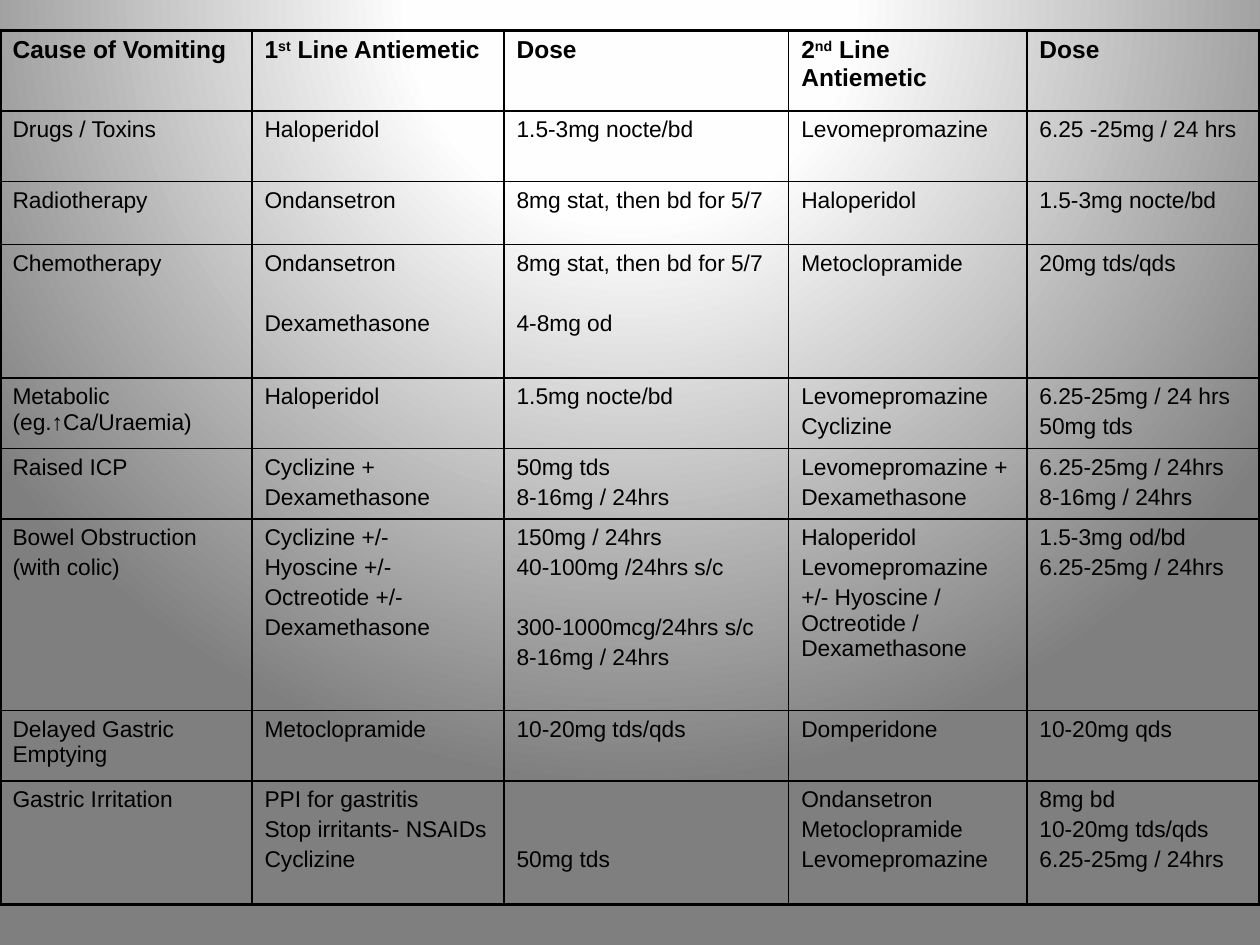
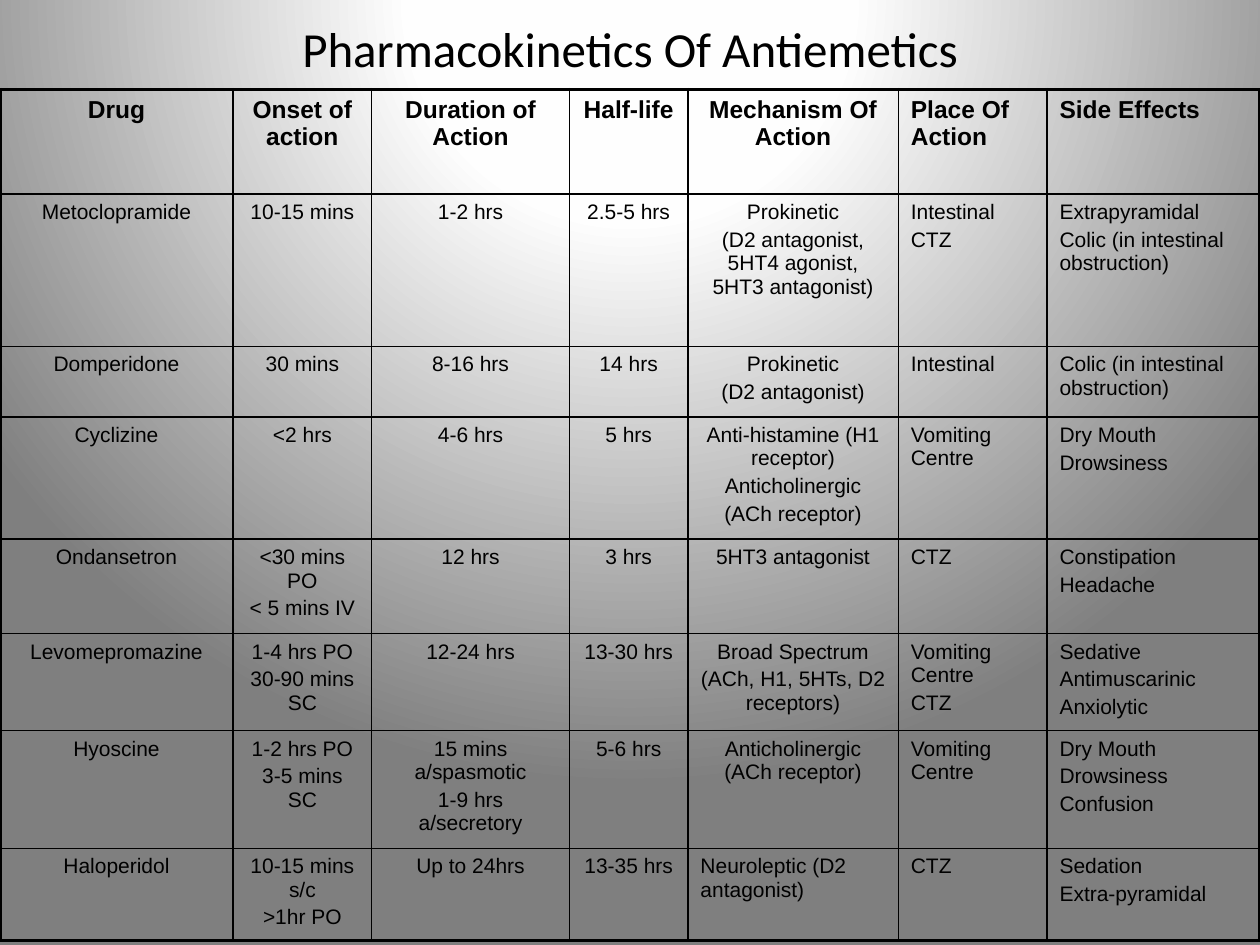
from lxml import etree
from pptx import Presentation
from pptx.dml.color import RGBColor
from pptx.enum.text import MSO_ANCHOR, PP_ALIGN
from pptx.oxml import parse_xml
from pptx.oxml.ns import nsdecls, qn
from pptx.util import Inches, Pt

BLACK = "000000"
GRADIENT = ((0, "FFFFFF"), (28, "FEFEFE"), (100, "7F7F7F"))
HEADER_SIZE = 14
OUTER_LINE, INNER_LINE = 2.25, 1
LINE_STEP = 1.32  # line height plus paragraph gap, in font sizes
PARA_GAP = 0.2


def color(value):
    return RGBColor.from_string(value)


def add_grid(page, top, widths, heights, rows, body_size, centred=0):
    """Ruled table; a line break starts a paragraph, ^marks^ raise text."""
    table = page.shapes.add_table(
        len(rows), len(widths), Inches(0), Inches(top),
        Inches(sum(widths)), Inches(sum(heights))).table
    table.first_row = table.horz_banding = False
    for column, width in zip(table.columns, widths):
        column.width = Inches(width)
    for line, height in zip(table.rows, heights):
        line.height = Inches(height)

    for r, row in enumerate(rows):
        size = body_size if r else HEADER_SIZE
        for c, text in enumerate(row):
            cell = table.cell(r, c)

            # Heavy outside edges, thin inside ones
            outer_edges = (("lnL", c == 0), ("lnR", c == len(widths) - 1),
                           ("lnT", r == 0), ("lnB", r == len(rows) - 1))
            properties = cell._tc.get_or_add_tcPr()
            for tag, is_outer in outer_edges:
                weight = Pt(OUTER_LINE if is_outer else INNER_LINE)
                edge = etree.SubElement(properties, qn(f"a:{tag}"), w=str(weight))
                ink = etree.SubElement(edge, qn("a:solidFill"))
                etree.SubElement(ink, qn("a:srgbClr"), val=BLACK)
            cell.fill.background()

            # Empty lines become spacing above the next paragraph
            frame = cell.text_frame
            skipped, para = 0, None
            for content in text.split("\n"):
                if not content:
                    skipped += 1
                    continue
                if para is None:
                    para = frame.paragraphs[0]
                    cell.margin_top = Inches(0.05) + Pt(skipped * LINE_STEP * size)
                else:
                    para = frame.add_paragraph()
                    para.space_before = Pt((PARA_GAP + skipped * LINE_STEP) * size)
                skipped = 0
                para.alignment = PP_ALIGN.CENTER if c < centred else PP_ALIGN.LEFT
                for part, words in enumerate(content.split("^")):
                    span = para.add_run()
                    span.text = words
                    span.font.name = "Arial"
                    span.font.size = Pt(size)
                    span.font.bold = r == 0
                    span.font.color.rgb = color(BLACK)
                    if part % 2:
                        span._r.get_or_add_rPr().set("baseline", "30000")
    return table


deck = Presentation()
deck.slide_width, deck.slide_height = Inches(10), Inches(7.5)
blank = deck.slide_layouts[6]

# Shared background: light glow from above the page
master = deck.slide_master
master.background.fill.solid()
stops = "".join(f'<a:gs pos="{place * 1000}"><a:srgbClr val="{shade}"/></a:gs>'
                for place, shade in GRADIENT)
glow = parse_xml(
    f'<a:gradFill {nsdecls("a")} rotWithShape="1"><a:gsLst>{stops}</a:gsLst>'
    '<a:path path="circle"><a:fillToRect l="50000" t="-80000" r="50000" b="180000"/>'
    '</a:path></a:gradFill>')
plain = master._element.find(".//" + qn("p:bgPr")).find(qn("a:solidFill"))
plain.getparent().replace(plain, glow)

# Slide 1: antiemetic choice by cause
page = deck.slides.add_slide(blank)
causes = [
    ("Cause of Vomiting", "1^st^ Line Antiemetic", "Dose",
     "2^nd^ Line Antiemetic", "Dose"),
    ("Drugs / Toxins", "Haloperidol", "1.5-3mg nocte/bd",
     "Levomepromazine", "6.25 -25mg / 24 hrs"),
    ("Radiotherapy", "Ondansetron", "8mg stat, then bd for 5/7",
     "Haloperidol", "1.5-3mg nocte/bd"),
    ("Chemotherapy", "Ondansetron\n\nDexamethasone",
     "8mg stat, then bd for 5/7\n\n4-8mg od", "Metoclopramide", "20mg tds/qds"),
    ("Metabolic (eg.↑Ca/Uraemia)", "Haloperidol", "1.5mg nocte/bd",
     "Levomepromazine\nCyclizine", "6.25-25mg / 24 hrs\n50mg tds"),
    ("Raised ICP", "Cyclizine +\nDexamethasone", "50mg tds\n8-16mg / 24hrs",
     "Levomepromazine +\nDexamethasone", "6.25-25mg / 24hrs\n8-16mg / 24hrs"),
    ("Bowel Obstruction\n(with colic)",
     "Cyclizine +/-\nHyoscine +/-\nOctreotide +/-\nDexamethasone",
     "150mg / 24hrs\n40-100mg /24hrs s/c\n\n300-1000mcg/24hrs s/c\n8-16mg / 24hrs",
     "Haloperidol\nLevomepromazine\n+/- Hyoscine / Octreotide / Dexamethasone",
     "1.5-3mg od/bd\n6.25-25mg / 24hrs"),
    ("Delayed Gastric Emptying", "Metoclopramide", "10-20mg tds/qds",
     "Domperidone", "10-20mg qds"),
    ("Gastric Irritation", "PPI for gastritis\nStop irritants- NSAIDs\nCyclizine",
     "\n\n50mg tds", "Ondansetron\nMetoclopramide\nLevomepromazine",
     "8mg bd\n10-20mg tds/qds\n6.25-25mg / 24hrs"),
]
add_grid(page, 0.24, (2, 2, 2.26, 1.89, 1.85),
         (0.64, 0.56, 0.5, 1.06, 0.56, 0.56, 1.52, 0.56, 0.98), causes, 13)

# Slide 2: title
page = deck.slides.add_slide(blank)
box = page.shapes.add_textbox(Inches(0.5), Inches(0), Inches(9), Inches(0.76))
box.text_frame.word_wrap = True
box.text_frame.vertical_anchor = MSO_ANCHOR.MIDDLE
para = box.text_frame.paragraphs[0]
para.alignment = PP_ALIGN.CENTER
span = para.add_run()
span.text = "Pharmacokinetics Of Antiemetics"
span.font.name = "Calibri"
span.font.size = Pt(28)
span.font.color.rgb = color(BLACK)

# Slide 2: drug properties
drugs = [
    ("Drug", "Onset of action", "Duration of Action", "Half-life",
     "Mechanism Of Action", "Place Of Action", "Side Effects"),
    ("Metoclopramide", "10-15 mins", "1-2 hrs", "2.5-5 hrs",
     "Prokinetic\n(D2 antagonist, 5HT4 agonist, 5HT3 antagonist)",
     "Intestinal\nCTZ", "Extrapyramidal\nColic (in intestinal obstruction)"),
    ("Domperidone", "30 mins", "8-16 hrs", "14 hrs",
     "Prokinetic\n(D2 antagonist)", "Intestinal",
     "Colic (in intestinal obstruction)"),
    ("Cyclizine", "<2 hrs", "4-6 hrs", "5 hrs",
     "Anti-histamine (H1 receptor)\nAnticholinergic\n(ACh receptor)",
     "Vomiting Centre", "Dry Mouth\nDrowsiness"),
    ("Ondansetron", "<30 mins PO\n< 5 mins IV", "12 hrs", "3 hrs",
     "5HT3 antagonist", "CTZ", "Constipation\nHeadache"),
    ("Levomepromazine", "1-4 hrs PO\n30-90 mins SC", "12-24 hrs", "13-30 hrs",
     "Broad Spectrum\n(ACh, H1, 5HTs, D2 receptors)",
     "Vomiting Centre\nCTZ", "Sedative\nAntimuscarinic\nAnxiolytic"),
    ("Hyoscine", "1-2 hrs PO\n3-5 mins SC",
     "15 mins a/spasmotic\n1-9 hrs a/secretory", "5-6 hrs",
     "Anticholinergic (ACh receptor)", "Vomiting Centre",
     "Dry Mouth\nDrowsiness\nConfusion"),
    ("Haloperidol", "10-15 mins s/c\n>1hr PO", "Up to 24hrs", "13-35 hrs",
     "Neuroleptic (D2 antagonist)", "CTZ", "Sedation\nExtra-pyramidal"),
]
table = add_grid(page, 0.71, (1.85, 1.1, 1.57, 0.94, 1.67, 1.18, 1.69),
                 (0.83, 1.21, 0.56, 0.97, 0.75, 0.77, 0.93, 0.73), drugs, 12,
                 centred=5)
neuroleptic = table.cell(7, 4).text_frame.paragraphs[0]
neuroleptic.alignment = PP_ALIGN.LEFT

deck.save("out.pptx")
